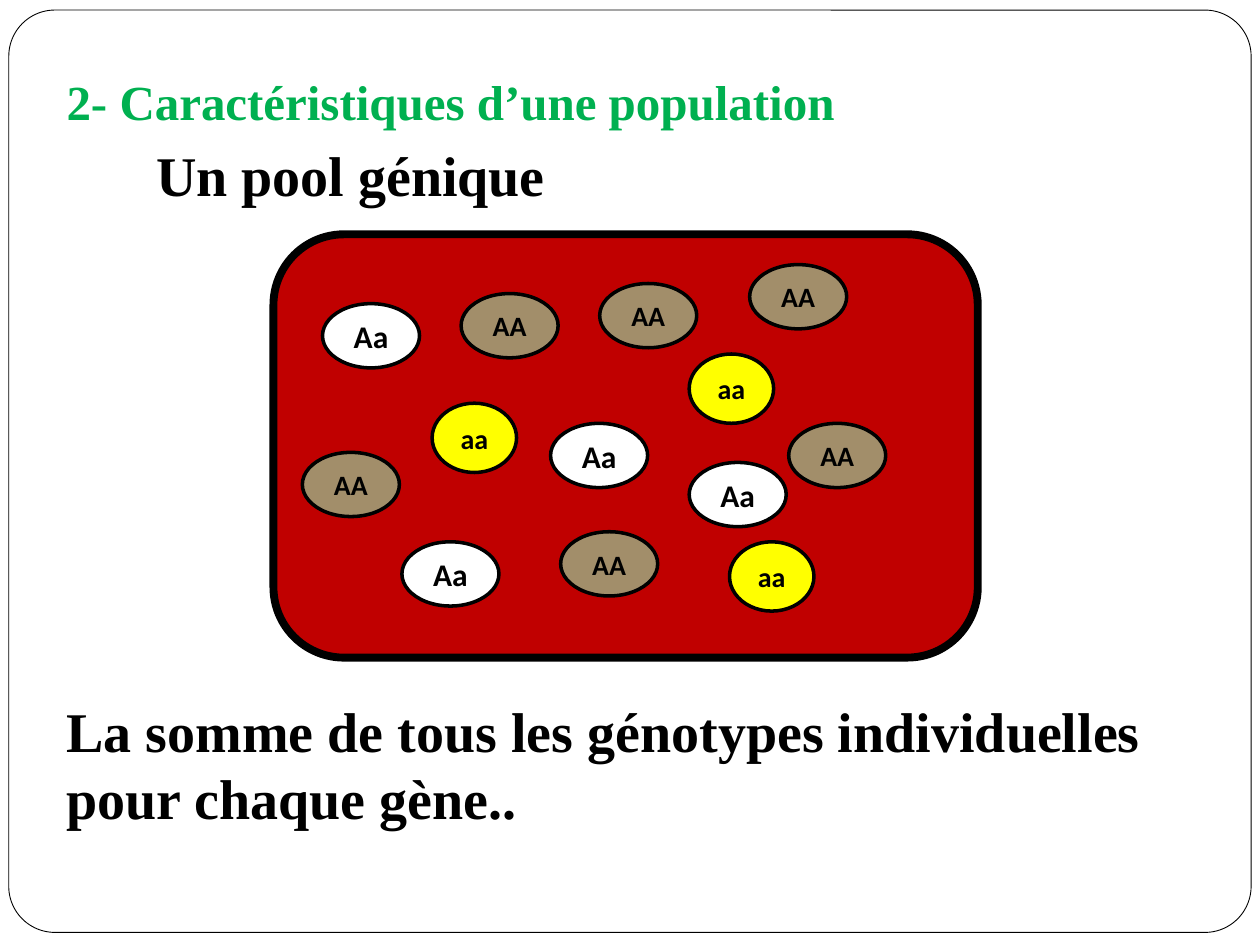
"""Build a slide on the gene pool of a population."""
import pptx
import pptx.dml.color
import pptx.enum.shapes
import pptx.enum.text
import pptx.util

Inches = pptx.util.Inches
SHAPES = pptx.enum.shapes.MSO_SHAPE
ANCHOR = pptx.enum.text.MSO_ANCHOR
ALIGN = pptx.enum.text.PP_ALIGN


def color(value):
    return pptx.dml.color.RGBColor.from_string(value)


def write(part, text, font_name, size, hex_color):
    run = part.text_frame.paragraphs[0].add_run()
    run.text = text
    font_format = {"name": font_name, "size": pptx.util.Pt(size), "bold": True}
    for attribute, value in font_format.items():
        setattr(run.font, attribute, value)
    run.font.color.rgb = color(hex_color)


def draw(parent, kind, box, fill, line_width):
    part = parent.add_shape(kind, *map(Inches, box))
    part.shadow.inherit = False
    part.fill.solid()
    part.fill.fore_color.rgb = color(fill)
    part.line.color.rgb = color("000000")
    part.line.width = pptx.util.Pt(line_width)
    return part


presentation = pptx.Presentation()
presentation.slide_width = Inches(10)
presentation.slide_height = Inches(7.5)
slide = presentation.slides.add_slide(presentation.slide_layouts[6])

border = draw(slide.shapes, SHAPES.ROUNDED_RECTANGLE, (0.07, 0.08, 9.86, 7.32), "FFFFFF", 0.5)
border.adjustments[0] = 0.05

statements = [
    ("2- Caractéristiques d’une population", (0.43, 0.52, 8.27, 0.57), 28, "00B050", True),
    ("Un pool génique", (1.14, 1.07, 3.4, 0.64), 32, "000000", False),
    ("La somme de tous les génotypes individuelles pour chaque gène..",
     (0.43, 5.48, 9.57, 1.18), 32, "000000", True),
]
for text, box, size, hex_color, wraps in statements:
    statement = slide.shapes.add_textbox(*map(Inches, box))
    statement.text_frame.word_wrap = wraps
    write(statement, text, "Times New Roman", size, hex_color)

pool = slide.shapes.add_group_shape().shapes
draw(pool, SHAPES.ROUNDED_RECTANGLE, (2.17, 1.86, 5.59, 3.36), "C00000", 4.5)

genotypes = {
    "AA": {"size": (0.77, 0.51), "fill": "A28E6A", "points": 16,
           "places": [(4.45, 4.22), (5.95, 2.1), (2.4, 3.59),
                      (4.76, 2.25), (6.26, 3.36), (3.66, 2.33)]},
    "Aa": {"size": (0.77, 0.51), "fill": "FFFFFF", "points": 18,
           "places": [(2.56, 2.41), (4.37, 3.36), (3.19, 4.3), (5.47, 3.67)]},
    "aa": {"size": (0.67, 0.55), "fill": "FFFF00", "points": 16,
           "places": [(3.43, 3.2), (5.47, 2.81), (5.79, 4.3)]},
}
for genotype, look in genotypes.items():
    for place in look["places"]:
        individual = draw(pool, SHAPES.OVAL, place + look["size"], look["fill"], 2)
        individual.text_frame.vertical_anchor = ANCHOR.MIDDLE
        individual.text_frame.paragraphs[0].alignment = ALIGN.CENTER
        write(individual, genotype, "Calibri", look["points"], "000000")

presentation.save("out.pptx")
